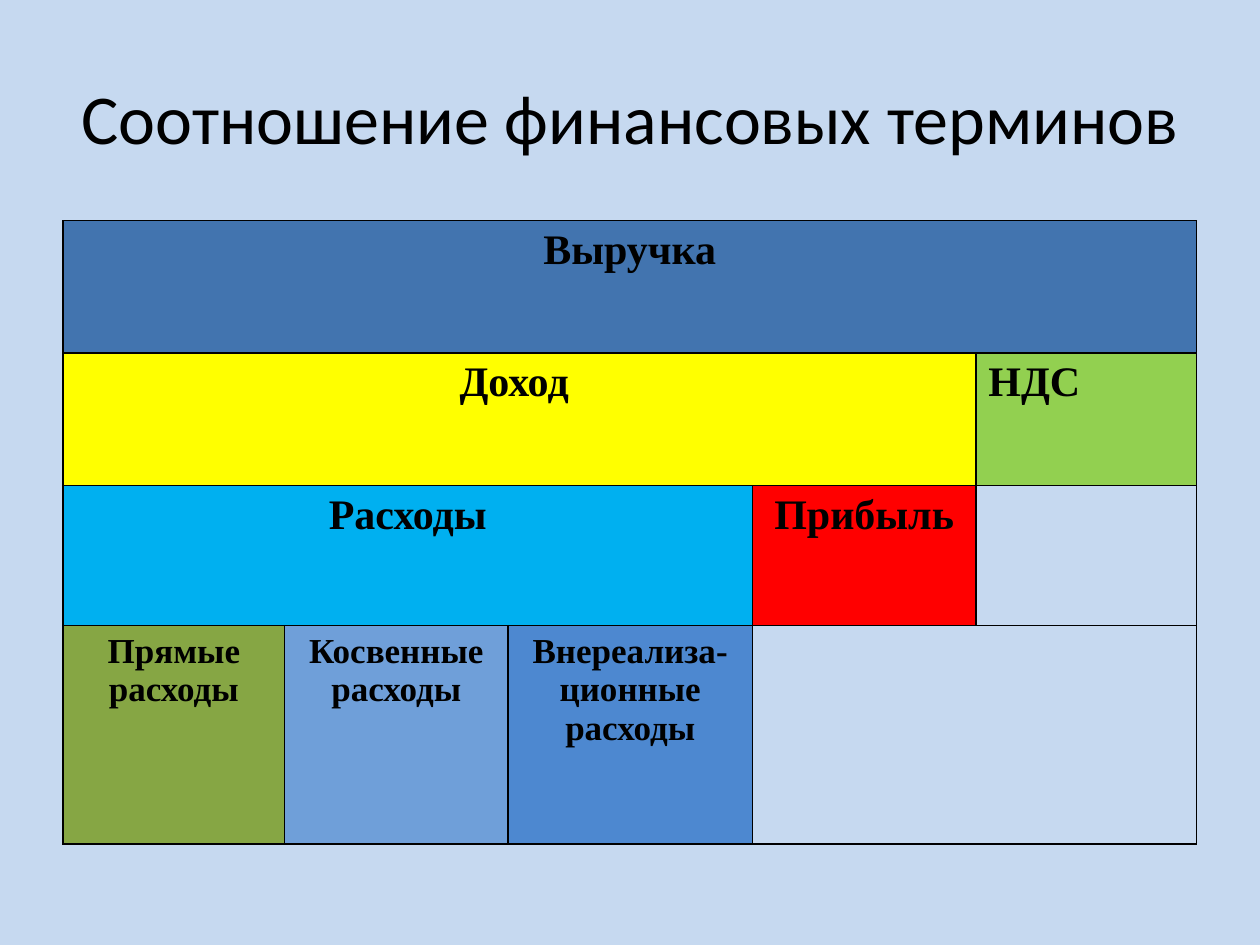
"""Build a slide showing how revenue splits into financial terms."""
from lxml.etree import SubElement
from pptx import Presentation
from pptx.dml.color import RGBColor
from pptx.enum.text import MSO_ANCHOR as Anchor, PP_ALIGN as Align
from pptx.oxml.ns import qn
from pptx.util import Cm, Pt

BLACK = RGBColor(0x00, 0x00, 0x00)
PALE_BLUE = RGBColor(0xC6, 0xD9, 0xF0)
STEEL = RGBColor(0x42, 0x74, 0xAF)
YELLOW = RGBColor(0xFF, 0xFF, 0x00)
LIME = RGBColor(0x92, 0xD0, 0x50)
CYAN = RGBColor(0x00, 0xB0, 0xF0)
RED = RGBColor(0xFF, 0x00, 0x00)
OLIVE = RGBColor(0x86, 0xA6, 0x44)
SKY = RGBColor(0x6F, 0x9F, 0xD9)
AZURE = RGBColor(0x4D, 0x88, 0xD0)

COLUMN_WIDTHS = [4.47, 4.5, 4.93, 4.5, 4.45]
ROW_HEIGHTS = [2.67, 2.67, 2.82, 4.4]
TERMS = [
    [("Выручка", 5, STEEL, Align.CENTER)],
    [("Доход ", 4, YELLOW, Align.CENTER), ("НДС", 1, LIME, Align.JUSTIFY)],
    [("Расходы", 3, CYAN, Align.CENTER), ("Прибыль", 1, RED, Align.CENTER),
     ("", 1, None, Align.LEFT)],
    [("Прямые расходы", 1, OLIVE, Align.CENTER),
     ("Косвенные расходы", 1, SKY, Align.CENTER),
     ("Внереализа-ционные расходы", 1, AZURE, Align.CENTER),
     ("", 2, None, Align.LEFT)],
]
TERM_SIZES = [24, 24, 24, 20]


class SlideBuilder:
    """Hold the style and the current slide."""

    title_font = "Calibri"
    term_font = "Times New Roman"
    ink = BLACK

    def __init__(self, page):
        self.page = page
        page.background.fill.solid()
        page.background.fill.fore_color.rgb = PALE_BLUE

    def label(self, frame, text, font, size, align, bold=False):
        """Put one styled paragraph into a text frame."""
        frame.text = text
        para = frame.paragraphs[0]
        para.alignment = align
        for span in para.runs:
            span.font.name = font
            span.font.size = Pt(size)
            span.font.bold = bold
            span.font.color.rgb = self.ink

    def title(self, text, left, top, width, height):
        """Add the centred heading."""
        box = self.page.shapes.add_textbox(Cm(left), Cm(top), Cm(width), Cm(height))
        box.text_frame.word_wrap = True
        box.text_frame.vertical_anchor = Anchor.MIDDLE
        self.label(box.text_frame, text, self.title_font, 40, Align.CENTER)

    def border(self, cell, points):
        """Draw a solid line on all four sides of a cell."""
        properties = cell._tc.get_or_add_tcPr()
        for side in ("a:lnL", "a:lnR", "a:lnT", "a:lnB"):
            line = SubElement(properties, qn(side), w=str(Pt(points)))
            fill = SubElement(line, qn("a:solidFill"))
            SubElement(fill, qn("a:srgbClr"), val=str(self.ink))

    def paint(self, cell, color):
        """Fill a cell, or leave it clear when there is no color."""
        if color is None:
            cell.fill.background()
        else:
            cell.fill.solid()
            cell.fill.fore_color.rgb = color

    def table(self, rows, sizes, widths, heights, left, top):
        """Add a bordered table whose cells may span several columns."""
        frame = self.page.shapes.add_table(
            len(heights), len(widths), Cm(left), Cm(top),
            Cm(sum(widths)), Cm(sum(heights)))
        grid = frame.table
        grid.first_row = grid.horz_banding = False
        for column, width in zip(grid.columns, widths):
            column.width = Cm(width)
        for row, height in zip(grid.rows, heights):
            row.height = Cm(height)
        for row_index, (terms, size) in enumerate(zip(rows, sizes)):
            start = 0
            for text, count, color, align in terms:
                end = start + count
                for index in range(start, end):
                    cell = grid.cell(row_index, index)
                    self.border(cell, 1)
                    self.paint(cell, color)
                first = grid.cell(row_index, start)
                if count > 1:
                    first.merge(grid.cell(row_index, end - 1))
                self.label(first.text_frame, text, self.term_font, size, align, True)
                start = end


def main():
    deck = Presentation()
    deck.slide_width, deck.slide_height = Cm(25.4), Cm(19.05)
    builder = SlideBuilder(deck.slides.add_slide(deck.slide_layouts[6]))
    builder.title("Соотношение финансовых терминов", 1.27, 0.76, 22.86, 3.18)
    builder.table(TERMS, TERM_SIZES, COLUMN_WIDTHS, ROW_HEIGHTS, 1.27, 4.45)
    deck.save("out.pptx")


if __name__ == "__main__":
    main()
